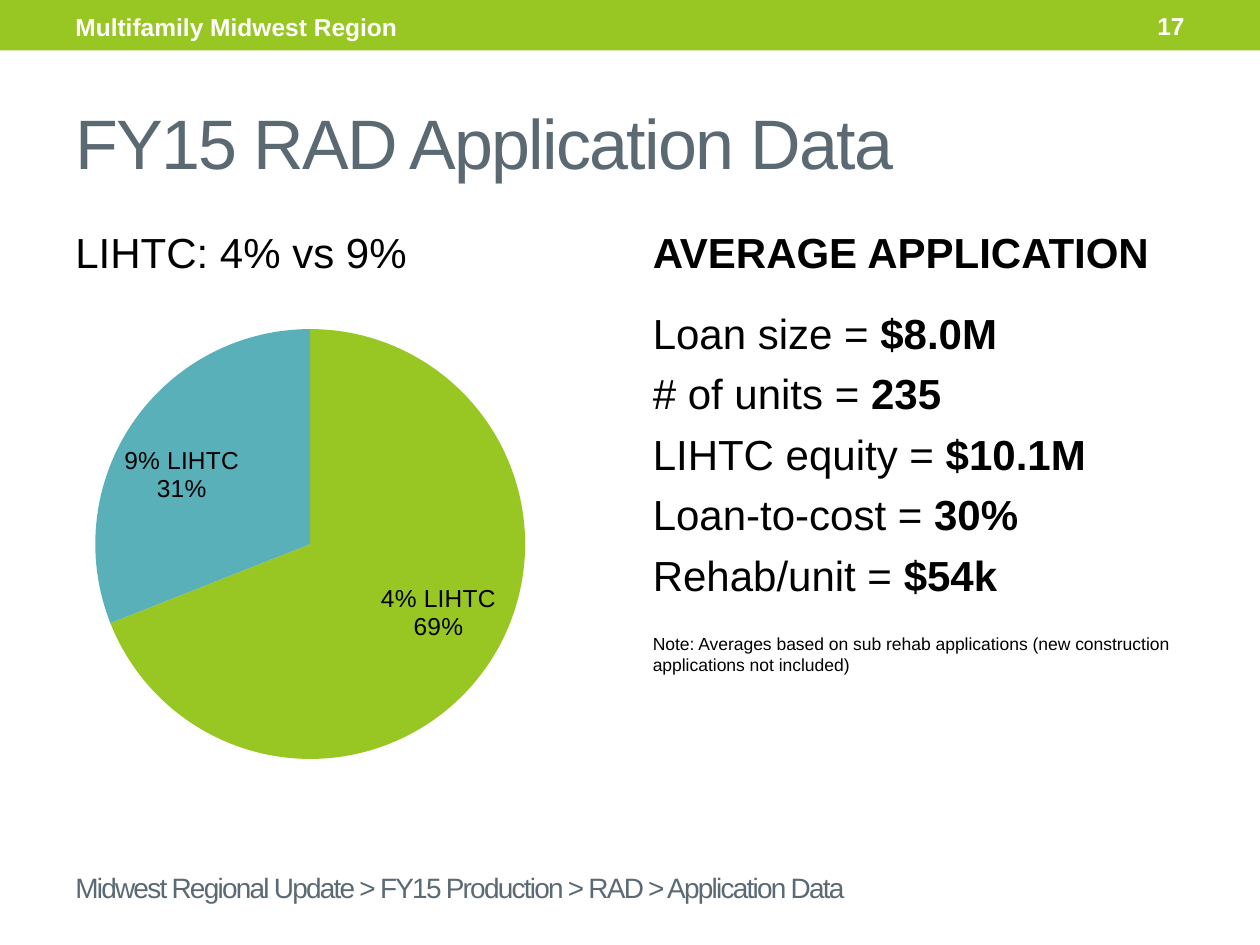
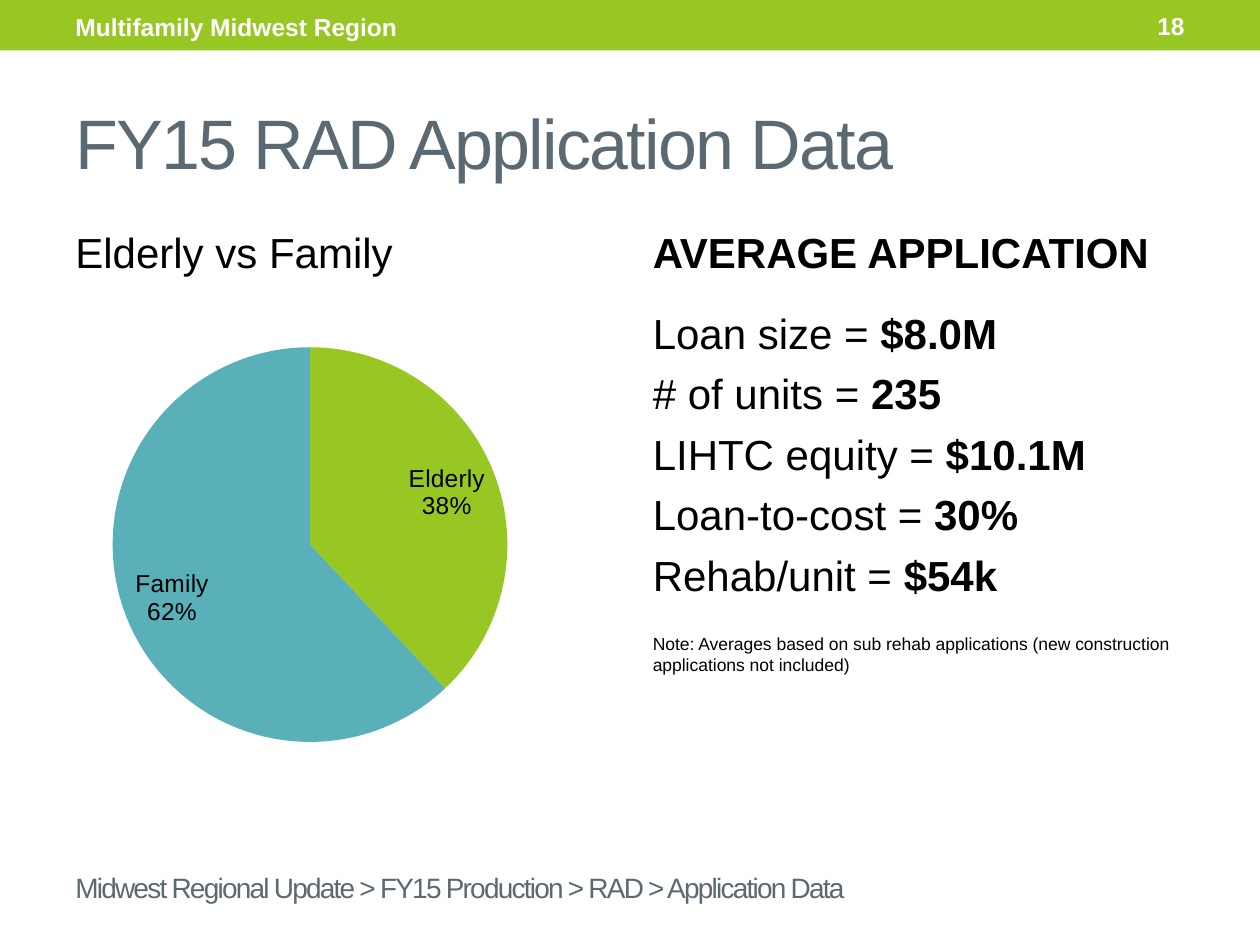
import pptx
import pptx.chart.data
import pptx.dml.color
import pptx.enum.chart
import pptx.enum.shapes
import pptx.enum.text
import pptx.oxml
import pptx.util

Cm = pptx.util.Cm
Pt = pptx.util.Pt
ALIGN = pptx.enum.text.PP_ALIGN
ANCHOR = pptx.enum.text.MSO_ANCHOR

FONT = "Arial"
GREEN, TEAL, SLATE = "98C723", "59B0B9", "5B6973"
BLACK, WHITE = "000000", "FFFFFF"
WIDTH, HEIGHT = 25.4, 19.05
EDGE = 1.27
GAP = 5.8

FACTS = [
    ("Loan size = ", "$8.0M"),
    ("# of units = ", "235"),
    ("LIHTC equity = ", "$10.1M"),
    ("Loan-to-cost = ", "30%"),
    ("Rehab/unit = ", "$54k"),
]
NOTE = ("Note: Averages based on sub rehab applications "
        "(new construction applications not included)")
TRAIL = "Midwest Regional Update > FY15 Production > RAD > Application Data"
PAGES = [
    (17, "LIHTC: 4% vs 9%", {"4% LIHTC": 69, "9% LIHTC": 31}, 8.67),
    (18, "Elderly vs Family", {"Elderly": 38, "Family": 62}, 7.96),
]


def color(code):
    return pptx.dml.color.RGBColor.from_string(code)


def place(shape, box):
    shape.left, shape.top, shape.width, shape.height = map(Cm, box)


def write(para, text, size, shade=BLACK, bold=False, track=0):
    run = para.add_run()
    run.text = text
    font = run.font
    font.name, font.size, font.bold = FONT, Pt(size), bold
    font.color.rgb = color(shade)
    if track:
        run._r.get_or_add_rPr().set("spc", str(track * 100))


def frame(slide, box, anchor=ANCHOR.TOP):
    shape = slide.shapes.add_textbox(*map(Cm, box))
    text = shape.text_frame
    text.word_wrap = True
    text.vertical_anchor = anchor
    return text


def line(slide, box, text, size, align=ALIGN.LEFT, **style):
    para = frame(slide, box, ANCHOR.MIDDLE).paragraphs[0]
    para.alignment = align
    write(para, text, size, **style)


def banner(slide, box, number):
    left, top, width, height = box
    band = slide.shapes.add_shape(
        pptx.enum.shapes.MSO_SHAPE.RECTANGLE, *map(Cm, box))
    band.shadow.inherit = False
    band.fill.solid()
    band.fill.fore_color.rgb = color(GREEN)
    band.line.fill.background()
    style = {"shade": WHITE, "bold": True}
    line(slide, (left + EDGE, top + 0.08, 11.43, height - 0.1),
         "Multifamily Midwest Region", 14, **style)
    line(slide, (left + width - EDGE - 2.97, top + 0.05, 2.97, height - 0.1),
         str(number), 14, ALIGN.RIGHT, **style)


def heading(slide, box):
    title = slide.shapes.title
    place(title, box)
    text = title.text_frame
    text.word_wrap = True
    text.auto_size = pptx.enum.text.MSO_AUTO_SIZE.NONE
    text.vertical_anchor = ANCHOR.MIDDLE
    para = text.paragraphs[0]
    para.alignment = ALIGN.LEFT
    write(para, "FY15 RAD Application Data", 40, SLATE, track=-1)


def center(chart, size, width, height):
    wide, high = size / width, size / height
    spots = {"x": (1 - wide) / 2, "y": (1 - high) / 2, "w": wide, "h": high}
    parts = "".join(f'<c:{key} val="{val:.3f}"/>' for key, val in spots.items())
    layout = pptx.oxml.parse_xml(
        '<c:layout xmlns:c="http://schemas.openxmlformats.org/'
        'drawingml/2006/chart"><c:manualLayout><c:layoutTarget val="inner"/>'
        '<c:xMode val="edge"/><c:yMode val="edge"/>'
        f'{parts}</c:manualLayout></c:layout>')
    area = chart._chartSpace.chart.plotArea
    for old in area.xpath("c:layout"):
        area.remove(old)
    area.insert(0, layout)


def split(labels):
    mark = pptx.oxml.parse_xml(
        '<c:separator xmlns:c="http://schemas.openxmlformats.org/'
        'drawingml/2006/chart">\n</c:separator>')
    labels._element.xpath("c:showBubbleSize")[0].addnext(mark)


def pie(slide, box, shares, size):
    data = pptx.chart.data.CategoryChartData()
    data.categories = list(shares)
    data.add_series("Series 1", list(shares.values()))
    chart = slide.shapes.add_chart(
        pptx.enum.chart.XL_CHART_TYPE.PIE, *map(Cm, box), data).chart
    chart.has_legend = False
    chart.has_title = False
    chart.font.name, chart.font.size = FONT, Pt(18)
    chart.font.color.rgb = color(BLACK)
    plot = chart.plots[0]
    plot.vary_by_categories = True
    for spot, shade in enumerate((GREEN, TEAL)):
        fill = plot.series[0].points[spot].format.fill
        fill.solid()
        fill.fore_color.rgb = color(shade)
    labels = plot.series[0].data_labels
    labels.show_value = False
    labels.show_category_name = True
    labels.show_percentage = True
    labels.position = pptx.enum.chart.XL_LABEL_POSITION.BEST_FIT
    labels.font.name, labels.font.size = FONT, Pt(14)
    labels.font.color.rgb = color(BLACK)
    split(labels)
    center(chart, size, *box[2:])


def left(slide, box, topic, shares, size):
    x, y, width, height = box
    pie(slide, (x - 0.84, y + 0.43, width + 0.84, 12.19), shares, size)
    para = frame(slide, box).paragraphs[0]
    para.space_before = Pt(GAP)
    write(para, topic, 24)


def facts(slide, box):
    text = frame(slide, box)
    para = text.paragraphs[0]
    para.space_before = Pt(GAP)
    write(para, "AVERAGE APPLICATION", 24, bold=True)
    for rank, (name, value) in enumerate(FACTS):
        para = text.add_paragraph()
        para.space_before = Pt(GAP if rank else 17)
        write(para, name, 24)
        write(para, value, 24, bold=True)
    para = text.add_paragraph()
    para.space_before = Pt(19)
    write(para, NOTE, 10)


def page(deck, number, topic, shares, size):
    slide = deck.slides.add_slide(deck.slide_layouts[5])
    wide = WIDTH - 2 * EDGE
    banner(slide, (0, 0, WIDTH, 1.02), number)
    heading(slide, (EDGE, 1.48, wide, 2.75))
    left(slide, (EDGE, 4.45, 10.8, 13.54), topic, shares, size)
    facts(slide, (12.91, 4.45, 12.07, 14.17))
    line(slide, (EDGE, 17.36, wide, 1.06), TRAIL, 16, shade=SLATE, track=-1)


def main():
    deck = pptx.Presentation()
    deck.slide_width, deck.slide_height = Cm(WIDTH), Cm(HEIGHT)
    for item in PAGES:
        page(deck, *item)
    deck.save("out.pptx")


if __name__ == "__main__":
    main()
